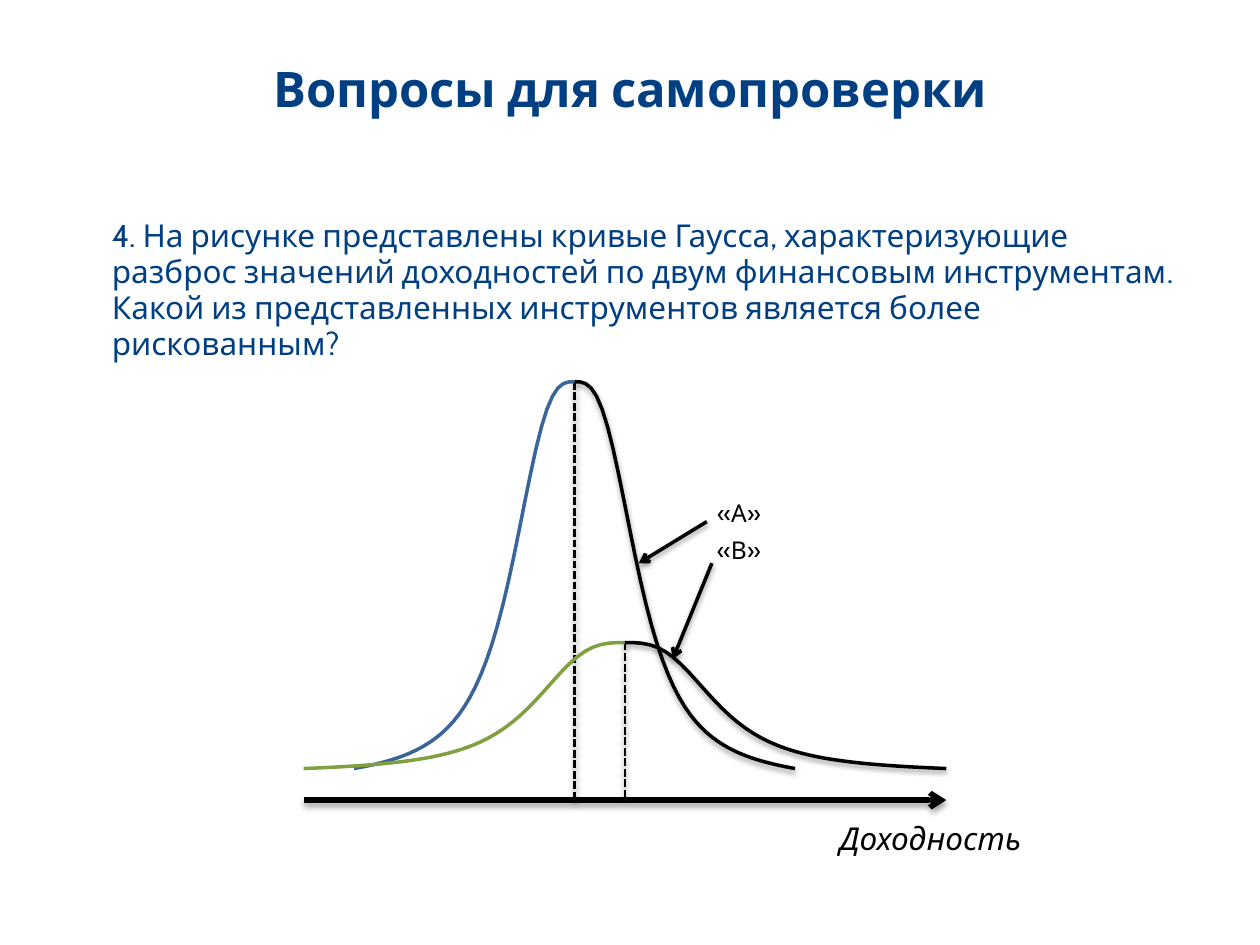
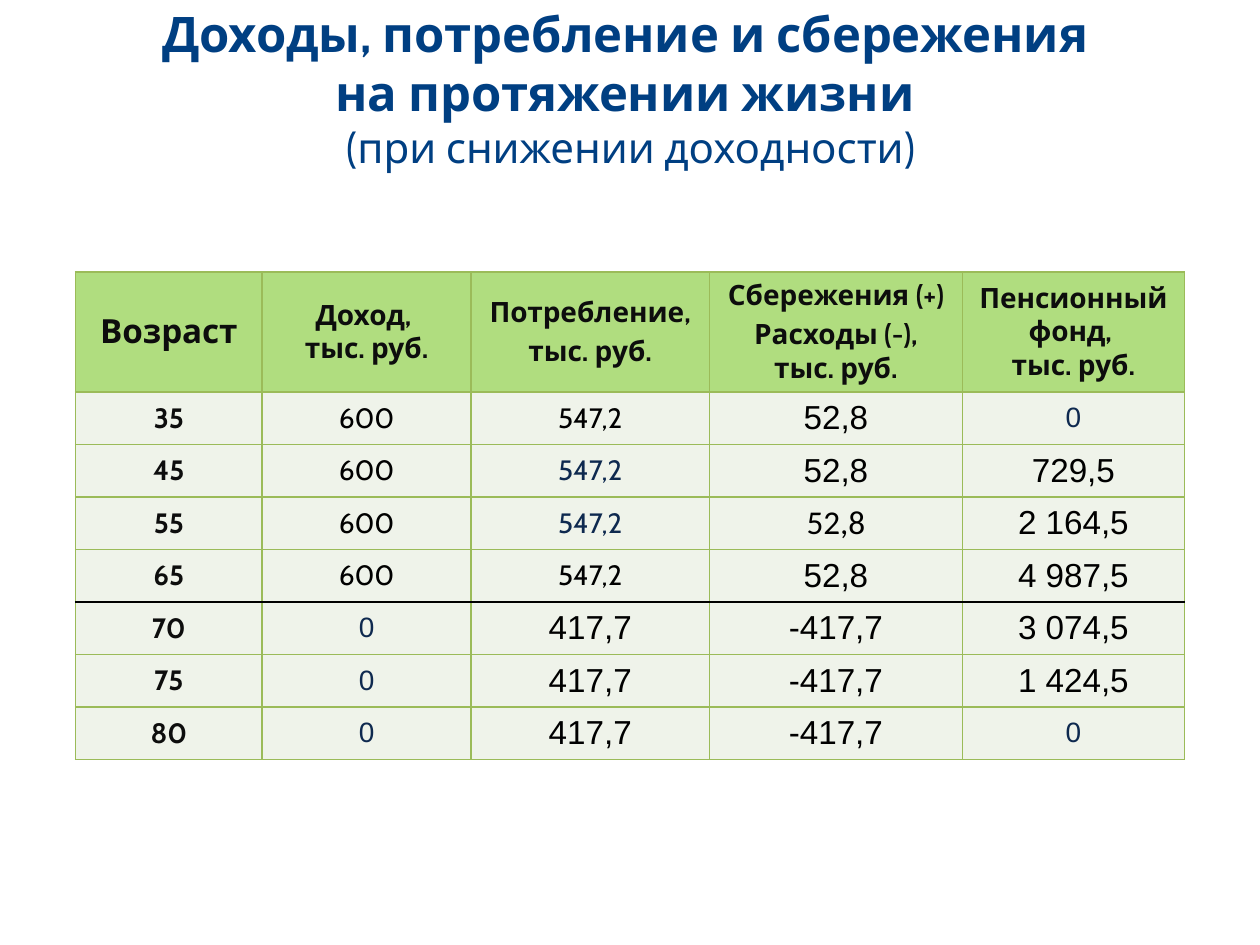
import pptx
import pptx.dml.color
import pptx.enum.dml
import pptx.enum.shapes
import pptx.enum.text
import pptx.oxml.ns
import pptx.util
from lxml import etree

Inches = pptx.util.Inches
Pt = pptx.util.Pt
qn = pptx.oxml.ns.qn
ALIGN = pptx.enum.text.PP_ALIGN
ANCHOR = pptx.enum.text.MSO_ANCHOR

COLORS = {
    "title": "003F82", "black": "000000", "ink": "0D0D0D", "navy": "0E294F",
    "blue": "3A6598", "olive": "81A042", "edge": "9BBB59",
    "head": "B0DD7F", "body": "EFF3EA",
}


def style(color, size, name="Cabin", **more):
    return color, dict(name=name, size=Pt(size), **more)


STYLES = {
    "title": style("title", 28, bold=True),
    "sub": style("title", 24, bold=False),
    "text": style("title", 18),
    "label": style("black", 14),
    "axis": style("black", 18, italic=True),
    "first": style("ink", 19, bold=True),
    "head": style("ink", 16, bold=True),
    "plain": style("black", 16),
    "navy": style("navy", 16),
    "zero": style("navy", 16, "Arial"),
    "big": style("black", 19, "Arial"),
    "alt": style("black", 19, "Calibri"),
}

BASE, AXIS = 6.1, 6.35
BELLS = [
    dict(peak=4.56, top=3.03, span=1.75, color="blue"),
    dict(peak=4.96, top=5.1, span=2.55, color="olive"),
]
STEPS = 40
KNEE = 0.295

COLS = [1.48, 1.66, 1.89, 2.01, 1.76]
HEAD_ROW, TABLE_HIGH = 0.95, 3.87
HEADS = [
    ["Возраст"],
    ["Доход, \vтыс. руб."],
    ["Потребление,", "тыс. руб."],
    ["Сбережения (+)", "Расходы (-), тыс. руб."],
    ["Пенсионный фонд, \vтыс. руб."],
]
WORK = ["600", "547,2", "52,8"]
REST = ["0", "417,7", "-417,7"]
FUNDS = {
    35: "0", 45: "729,5", 55: "2 164,5", 65: "4 987,5",
    70: "3 074,5", 75: "1 424,5", 80: "0",
}
RETIRE = 70
SPECIAL = {(45, 2): "navy", (55, 2): "navy", (55, 3): "alt"}


def paint(target, color):
    target.rgb = pptx.dml.color.RGBColor.from_string(COLORS[color])


def fill_in(part, color):
    part.fill.solid()
    paint(part.fill.fore_color, color)


def write(frame, items, align=ALIGN.LEFT, **form):
    for num, (text, kind) in enumerate(items):
        par = frame.add_paragraph() if num else frame.paragraphs[0]
        par.text = text
        for key, val in dict(alignment=align, **form).items():
            setattr(par, key, val)
        color, values = STYLES[kind]
        for run in par.runs:
            for key, val in values.items():
                setattr(run.font, key, val)
            paint(run.font.color, color)


def add_text(slide, box, items, anchor=ANCHOR.TOP, **form):
    frame = slide.shapes.add_textbox(*map(Inches, box)).text_frame
    frame.word_wrap = True
    frame.vertical_anchor = anchor
    write(frame, items, **form)


def add_title(slide, left, width, items):
    add_text(slide, (left, 0.47, width, 0.45), items, ANCHOR.MIDDLE,
             align=ALIGN.CENTER)


def add_shadow(effects):
    outer = etree.SubElement(effects, qn("a:outerShdw"), blurRad="40000",
                             dist="20000", dir="5400000", rotWithShape="0")
    tone = etree.SubElement(outer, qn("a:srgbClr"), val=COLORS["black"])
    etree.SubElement(tone, qn("a:alpha"), val="38000")


def stroke(shape, color, width, dash=None, arrow=False, shadow=True):
    fill_in(shape.line, color)
    for key, val in dict(width=Pt(width), dash_style=dash).items():
        setattr(shape.line, key, val)
    props = shape.element.spPr
    if arrow:
        etree.SubElement(props.find(qn("a:ln")), qn("a:tailEnd"), type="arrow")
    effects = etree.SubElement(props, qn("a:effectLst"))
    if shadow:
        add_shadow(effects)


def add_line(slide, start, end, width, **form):
    kind = pptx.enum.shapes.MSO_CONNECTOR.STRAIGHT
    line = slide.shapes.add_connector(kind, *map(Inches, start + end))
    stroke(line, "black", width, **form)


def add_curve(slide, points, color, shadow):
    start, *rest = [(Inches(x), Inches(y)) for x, y in points]
    pen = slide.shapes.build_freeform(*start)
    pen.add_line_segments(rest, close=False)
    curve = pen.convert_to_shape()
    curve.fill.background()
    stroke(curve, color, 2, shadow=shadow)


def height(part):
    return (1 - part ** 4) / (1 + (part / KNEE) ** 3)


def add_bell(slide, peak, top, span, color):
    parts = [step / STEPS for step in range(STEPS + 1)]
    for side, tone, shadow in ((-1, color, False), (1, "black", True)):
        points = [(peak + side * span * part,
                   BASE - (BASE - top) * height(part)) for part in parts]
        add_curve(slide, points, tone, shadow)


def add_edges(cell, dark):
    props = cell._tc.get_or_add_tcPr()
    for side in "LRTB":
        edge = etree.SubElement(props, qn("a:ln" + side), w=str(Pt(1)))
        fill = etree.SubElement(edge, qn("a:solidFill"))
        color = COLORS["black" if side == dark else "edge"]
        etree.SubElement(fill, qn("a:srgbClr"), val=color)


def add_cell(cell, items, fill, dark=None):
    add_edges(cell, dark)
    fill_in(cell, fill)
    cell.vertical_anchor = ANCHOR.MIDDLE
    write(cell.text_frame, items, ALIGN.CENTER, space_before=Pt(3))


def pick(age, col, text):
    if col == 0:
        return "head"
    if text == "0":
        return "zero"
    if (age, col) in SPECIAL:
        return SPECIAL[age, col]
    return "plain" if text in WORK[:2] else "big"


def add_grid(slide, left, top):
    count = len(FUNDS)
    size = map(Inches, (left, top, sum(COLS), TABLE_HIGH))
    table = slide.shapes.add_table(count + 1, len(COLS), *size).table
    table.horz_banding = False
    for col, width in zip(table.columns, COLS):
        col.width = Inches(width)
    for row in table.rows:
        row.height = Inches((TABLE_HIGH - HEAD_ROW) / count)
    table.rows[0].height = Inches(HEAD_ROW)

    for col, lines in enumerate(HEADS):
        kind = "head" if col else "first"
        add_cell(table.cell(0, col), [(text, kind) for text in lines], "head")

    ages = list(FUNDS)
    split = ages.index(RETIRE)
    dark = {split - 1: "B", split: "T"}
    for row, age in enumerate(ages):
        flow = WORK if age < RETIRE else REST
        for col, text in enumerate([str(age), *flow, FUNDS[age]]):
            items = [(text, pick(age, col, text))]
            add_cell(table.cell(row + 1, col), items, "body", dark.get(row))


def add_quiz(slide):
    add_title(slide, 0.78, 8.44, [("Вопросы для самопроверки", "title")])
    add_text(slide, (0.79, 1.69, 8.63, 0.96), [(
        "4. На рисунке представлены кривые Гаусса, характеризующие разброс "
        "значений доходностей по двум финансовым инструментам. Какой из "
        "представленных инструментов является более рискованным?", "text")],
        line_spacing=0.95, space_after=Pt(3))

    dash = pptx.enum.dml.MSO_LINE.SQUARE_DOT
    for bell in BELLS:
        peak = bell["peak"]
        add_line(slide, (peak, bell["top"]), (peak, AXIS), 1.5, dash=dash)
    add_line(slide, (2.41, AXIS), (7.51, AXIS), 3, arrow=True)
    for bell in BELLS:
        add_bell(slide, **bell)

    for box, text, kind in (
        ((5.58, 3.9, 0.57, 0.34), "«А»", "label"),
        ((5.58, 4.2, 0.57, 0.34), "«В»", "label"),
        ((6.46, 6.45, 1.85, 0.4), "Доходность", "axis"),
    ):
        add_text(slide, box, [(text, kind)], align=ALIGN.CENTER)
    for start, end in (((5.61, 4.14), (5.07, 4.47)),
                       ((5.65, 4.47), (5.34, 5.23))):
        add_line(slide, start, end, 2, arrow=True)


def add_budget(slide):
    add_title(slide, 1.06, 7.89, [
        ("Доходы, потребление и сбережения \vна протяжении жизни ", "title"),
        ("(при снижении доходности)", "sub")])
    add_grid(slide, 0.6, 2.16)


def main():
    deck = pptx.Presentation()
    deck.slide_width, deck.slide_height = Inches(10), Inches(7.5)
    for build in (add_quiz, add_budget):
        build(deck.slides.add_slide(deck.slide_layouts[6]))
    deck.save("out.pptx")


if __name__ == "__main__":
    main()
